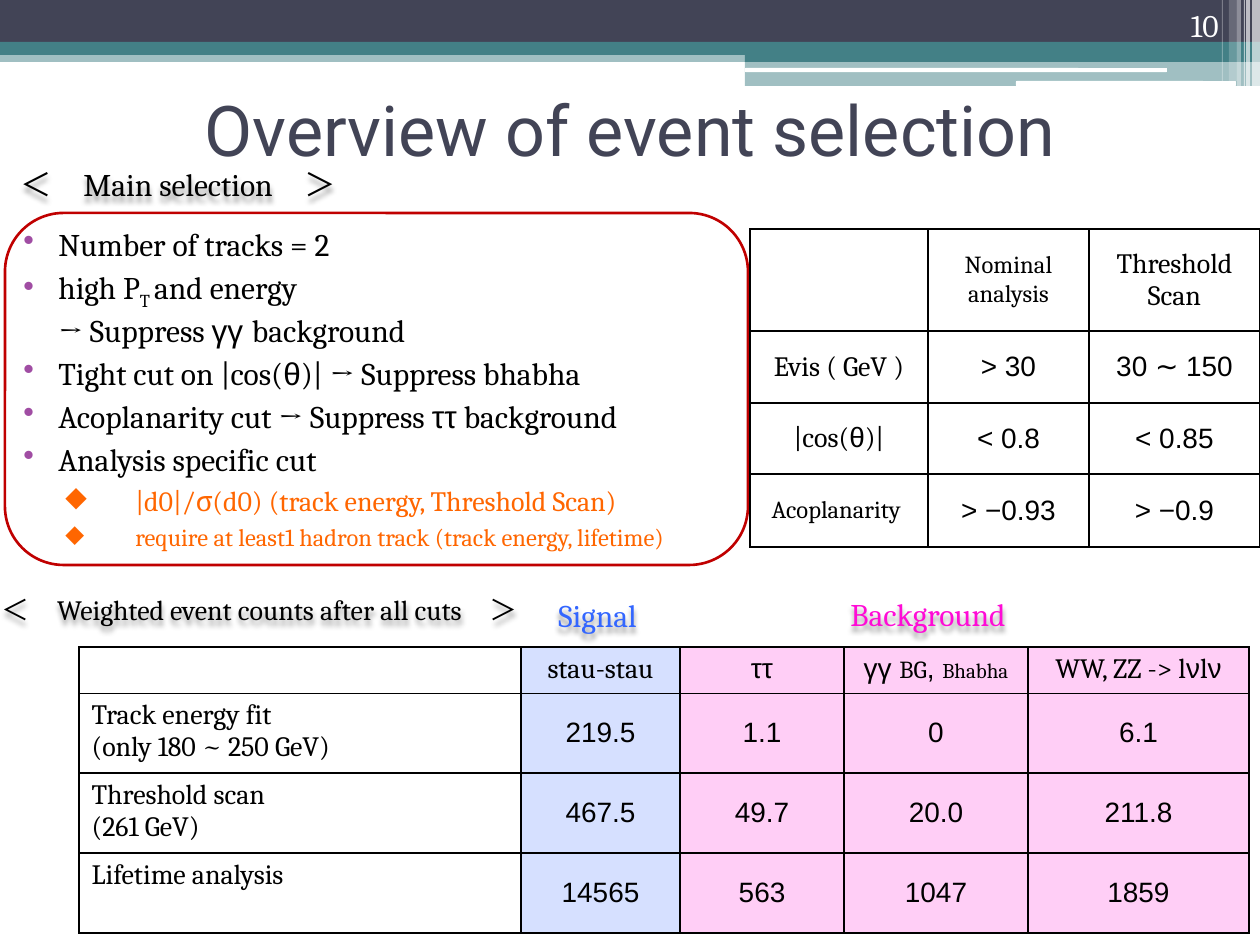
from dataclasses import dataclass
from typing import Optional

import pptx
import pptx.dml.color
import pptx.enum.shapes
import pptx.enum.text
import pptx.oxml.ns
import pptx.util
from lxml import etree

EMU_PER_PX = 914400 / 126
ALIGN = pptx.enum.text.PP_ALIGN
ANCHOR = pptx.enum.text.MSO_ANCHOR
SHAPE = pptx.enum.shapes.MSO_SHAPE
qn = pptx.oxml.ns.qn


@dataclass(frozen=True)
class Theme:
    navy: str = "424456"
    teal: str = "438086"
    white: str = "FFFFFF"
    black: str = "000000"
    red: str = "C00000"
    purple: str = "A04DA3"
    orange: str = "FF6600"
    signal: str = "3366FF"
    background: str = "FF0BD6"
    heading: str = "Roboto"
    serif: str = "Cambria"
    sans: str = "Arial"
    title: int = 40
    body: int = 18
    table: int = 16
    small: int = 14
    tiny: int = 12


THEME = Theme()


@dataclass(frozen=True)
class Box:
    left: int
    top: int
    width: int
    height: int


@dataclass(frozen=True)
class Bar:
    box: Box
    color: str
    opacity: int = 100
    kind: int = SHAPE.RECTANGLE


@dataclass(frozen=True)
class Run:
    text: str
    font: Optional[str] = None
    size: Optional[int] = None
    subscript: bool = False


@dataclass(frozen=True)
class Bullet:
    symbol: str
    color: str
    margin: int
    hanging: int


@dataclass(frozen=True)
class Line:
    runs: tuple
    size: int = THEME.body
    font: str = THEME.serif
    color: str = THEME.black
    align: Optional[int] = None
    bullet: Optional[Bullet] = None


@dataclass(frozen=True)
class Label:
    text: str
    box: Box
    size: int = THEME.body
    color: str = THEME.black


def px(value: int) -> int:
    return round(value * EMU_PER_PX)


def place(box: Box) -> tuple:
    return px(box.left), px(box.top), px(box.width), px(box.height)


def rgb(color: str):
    return pptx.dml.color.RGBColor.from_string(color)


def paint(fill, properties, color: str, opacity: int = 100) -> None:
    fill.solid()
    fill.fore_color.rgb = rgb(color)
    if opacity < 100:
        tint = properties.find(".//" + qn("a:srgbClr"))
        etree.SubElement(tint, qn("a:alpha"), val=str(opacity * 1000))


def draw_bar(slide, bar: Bar):
    shape = slide.shapes.add_shape(bar.kind, *place(bar.box))
    shape.shadow.inherit = False
    paint(shape.fill, shape._element.spPr, bar.color, bar.opacity)
    shape.line.fill.background()
    return shape


def write(paragraph, line: Line) -> None:
    if line.bullet:
        properties = paragraph._p.get_or_add_pPr()
        properties.set("marL", str(px(line.bullet.margin)))
        properties.set("indent", str(-px(line.bullet.hanging)))
        color = etree.SubElement(properties, qn("a:buClr"))
        etree.SubElement(color, qn("a:srgbClr"), val=line.bullet.color)
        etree.SubElement(properties, qn("a:buChar"), char=line.bullet.symbol)
    if line.align is not None:
        paragraph.alignment = line.align
    paragraph.font.size = pptx.util.Pt(line.size)
    paragraph.font.name = line.font
    paragraph.font.color.rgb = rgb(line.color)
    for part in line.runs:
        for index, text in enumerate(part.text.split("\n")):
            if index:
                paragraph.add_line_break()
            run = paragraph.add_run()
            run.text = text
            if part.font:
                run.font.name = part.font
            if part.size:
                run.font.size = pptx.util.Pt(part.size)
            if part.subscript:
                run.font._element.set("baseline", "-25000")


def write_lines(frame, lines, gap: int = 0) -> None:
    for index, line in enumerate(lines):
        paragraph = frame.add_paragraph() if index else frame.paragraphs[0]
        if index and gap:
            paragraph.space_before = pptx.util.Pt(gap)
        write(paragraph, line)


def draw_text(slide, box: Box, lines, anchor=ANCHOR.MIDDLE, gap: int = 0):
    shape = slide.shapes.add_textbox(*place(box))
    shape.text_frame.word_wrap = True
    shape.text_frame.vertical_anchor = anchor
    write_lines(shape.text_frame, lines, gap)
    return shape


def draw_label(slide, label: Label) -> None:
    line = Line((Run(label.text),), label.size, color=label.color)
    shape = draw_text(slide, label.box, [line])
    effects = etree.SubElement(shape._element.spPr, qn("a:effectLst"))
    shadow = etree.SubElement(effects, qn("a:outerShdw"), blurRad="38100",
                              dist="38100", dir="5400000", algn="t")
    color = etree.SubElement(shadow, qn("a:srgbClr"), val=THEME.black)
    etree.SubElement(color, qn("a:alpha"), val="40000")


def add_borders(properties) -> None:
    for index, side in enumerate(("lnL", "lnR", "lnT", "lnB")):
        border = etree.Element(qn("a:" + side), w="12700")
        fill = etree.SubElement(border, qn("a:solidFill"))
        etree.SubElement(fill, qn("a:srgbClr"), val=THEME.black)
        properties.insert(index, border)


def draw_table(slide, left, top, widths, heights, rows, anchors, tints) -> None:
    """Each cell is a list of lines; anchors go by row and column, tints by column."""
    box = Box(left, top, sum(widths), sum(heights))
    table = slide.shapes.add_table(len(heights), len(widths), *place(box)).table
    table.first_row = table.horz_banding = False
    for column, width in zip(table.columns, widths):
        column.width = px(width)
    for r, (height, cells) in enumerate(zip(heights, rows)):
        table.rows[r].height = px(height)
        for c, lines in enumerate(cells):
            cell = table.cell(r, c)
            cell.vertical_anchor = anchors(r, c)
            properties = cell._tc.get_or_add_tcPr()
            if tints[c]:
                paint(cell.fill, properties, tints[c], 20)
            else:
                cell.fill.background()
            add_borders(properties)
            write_lines(cell.text_frame, lines)
            if not lines:
                etree.SubElement(cell.text_frame.paragraphs[0]._p, qn("a:endParaRPr"),
                                 sz=str(THEME.table * 100))


def centred(*runs: Run, size: int = THEME.table, font: str = THEME.serif) -> list:
    return [Line(runs, size, font, align=ALIGN.CENTER)]


def numbers(*values: str) -> list:
    return [centred(Run(value), font=THEME.sans) for value in values]


def row_name(*texts: str) -> list:
    return [Line((Run(text),), THEME.table) for text in texts]


def greek(text: str) -> Run:
    return Run(text, THEME.sans)


# Header band, with pale stripes at the right edge
BARS = [
    Bar(Box(0, 50, 1260, 12), THEME.teal, 50),
    Bar(Box(0, 0, 1260, 43), THEME.navy),
    Bar(Box(0, 42, 1260, 13), THEME.teal),
    Bar(Box(745, 49, 515, 13), THEME.teal),
    Bar(Box(745, 61, 515, 25), THEME.teal, 50),
    Bar(Box(745, 68, 422, 4), THEME.white, kind=SHAPE.ROUNDED_RECTANGLE),
    Bar(Box(1016, 81, 220, 5), THEME.white, kind=SHAPE.ROUNDED_RECTANGLE),
] + [Bar(Box(left, 0, width, height), THEME.white, opacity)
     for left, width, height, opacity in (
         (1252, 8, 86, 65), (1246, 4, 86, 65), (1244, 1, 86, 60),
         (1237, 4, 86, 40), (1229, 8, 81, 20), (1222, 1, 81, 30))]

# Selection criteria
DOT = Bullet("•", THEME.purple, 50, 35)
DIAMOND = Bullet("◆", THEME.orange, 127, 70)
CRITERIA = [Line(runs, bullet=DOT) for runs in (
    (Run("Number of tracks = 2"),),
    (Run("high P"), Run("T ", subscript=True), Run("and energy\n→ Suppress "),
     greek("γγ "), Run("background")),
    (Run("Tight cut on |cos("), greek("θ"), Run(")| → Suppress bhabha")),
    (Run("Acoplanarity cut → Suppress "), greek("ττ"), Run(" background")),
    (Run("Analysis specific cut"),))
] + [Line((Run(text),), size, color=THEME.orange, bullet=DIAMOND) for text, size in (
    ("|d0|/σ(d0) (track energy, Threshold Scan)", THEME.table),
    ("require at least1 hadron track (track energy, lifetime)", THEME.small))]

# Table contents
CUTS = [
    [[], centred(Run("Nominal analysis"), size=THEME.small), centred(Run("Threshold Scan"))],
    [centred(Run("Evis ( GeV )")), *numbers("> 30", "30 ∼ 150")],
    [centred(Run("|cos("), greek("θ"), Run(")|")), *numbers("< 0.8", "< 0.85")],
    [centred(Run("Acoplanarity "), size=THEME.small), *numbers("> −0.93", "> −0.9")],
]
COUNTS = [
    [[], centred(Run("stau-stau")), centred(greek("ττ")),
     centred(greek("γγ "), Run("BG", size=THEME.small), greek(", "),
             Run("Bhabha", size=THEME.tiny)),
     centred(Run("WW, ZZ -> l"), greek("ν"), Run("l"), greek("ν"))],
    [row_name("Track energy fit\n(only 180 ~ 250 GeV)"), *numbers("219.5", "1.1", "0", "6.1")],
    [row_name("Threshold scan", "(261 GeV)"), *numbers("467.5", "49.7", "20.0", "211.8")],
    [row_name("Lifetime analysis"), *numbers("14565", "563", "1047", "1859")],
]

LABELS = [
    Label("＜\u3000Weighted event counts after all cuts\u3000＞".replace("\u3000", "　"),
          Box(-11, 575, 559, 68), THEME.table),
    Label("＜　Main selection　＞", Box(8, 150, 378, 68)),
    Label("Signal", Box(546, 581, 131, 68), color=THEME.signal),
    Label("Background", Box(838, 580, 228, 68), color=THEME.background),
]


def main() -> None:
    presentation = pptx.Presentation()
    presentation.slide_width, presentation.slide_height = px(1260), px(945)
    slide = presentation.slides.add_slide(presentation.slide_layouts[6])

    for bar in BARS:
        draw_bar(slide, bar)
    draw_text(slide, Box(63, 74, 1134, 108), [Line(
        (Run("Overview of event selection"),), THEME.title, THEME.heading,
        THEME.navy, ALIGN.CENTER)])
    draw_text(slide, Box(1126, 0, 105, 50), [Line(
        (Run("10"),), color=THEME.white, align=ALIGN.RIGHT)], ANCHOR.BOTTOM)

    frame = draw_bar(slide, Bar(Box(5, 213, 743, 352), THEME.white,
                                kind=SHAPE.ROUNDED_RECTANGLE))
    frame.line.color.rgb = rgb(THEME.red)
    frame.line.width = pptx.util.Pt(1.5)
    draw_text(slide, Box(-4, 219, 922, 387), CRITERIA, ANCHOR.TOP, gap=3)

    draw_table(slide, 750, 229, (178, 161, 171), (102, 72, 71, 73), CUTS,
               lambda r, c: ANCHOR.MIDDLE, (None,) * 3)
    draw_table(slide, 79, 647, (442, 159, 164, 184, 221), (45, 80, 80, 80), COUNTS,
               lambda r, c: ANCHOR.MIDDLE if r and c else ANCHOR.TOP,
               (None, THEME.signal) + (THEME.background,) * 3)

    for label in LABELS:
        draw_label(slide, label)
    presentation.save("out.pptx")


if __name__ == "__main__":
    main()
